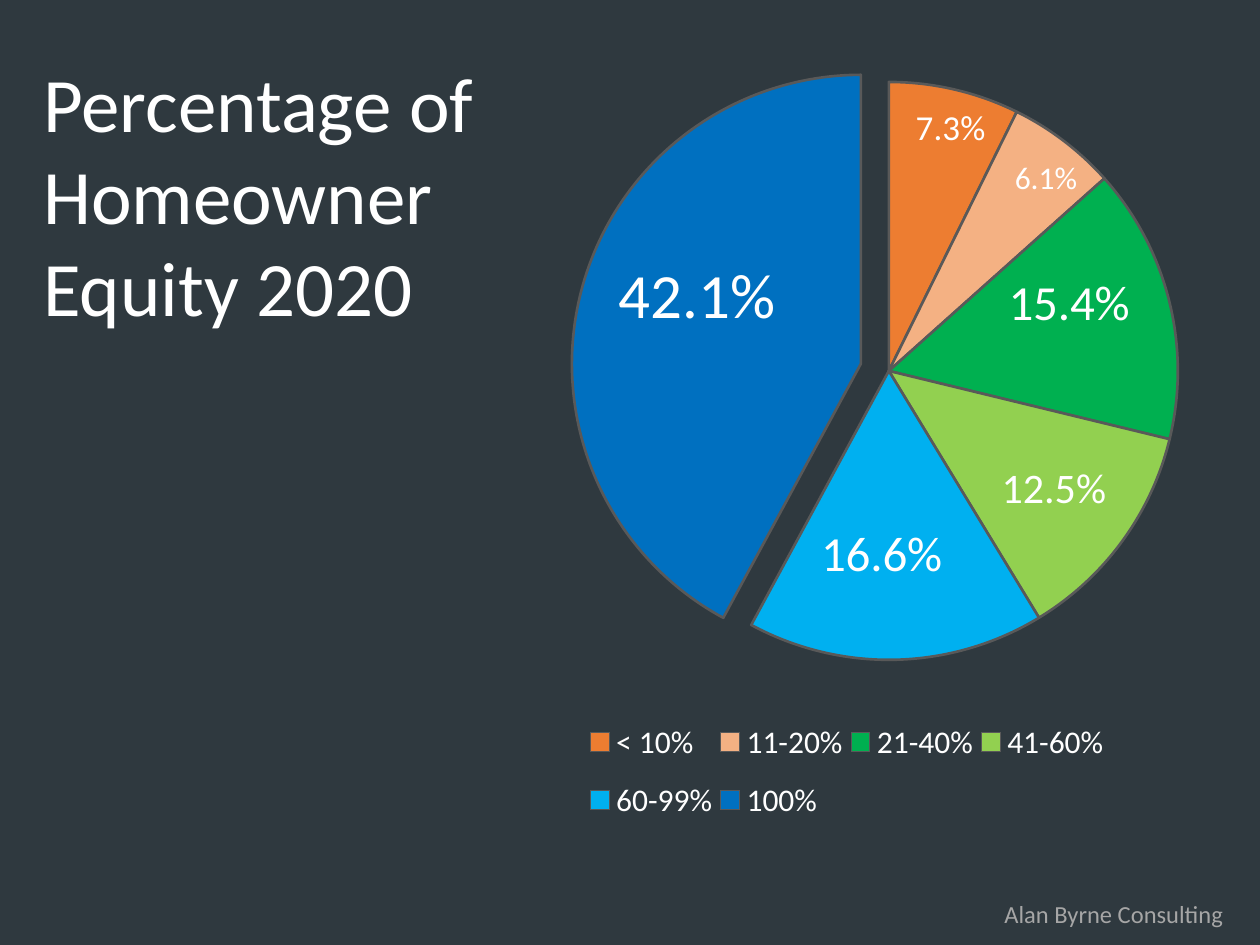
from lxml.etree import Element, SubElement
from pptx import Presentation
from pptx.chart.data import CategoryChartData
from pptx.dml.color import RGBColor
from pptx.enum.chart import XL_CHART_TYPE, XL_LABEL_POSITION, XL_LEGEND_POSITION
from pptx.oxml.ns import qn
from pptx.util import Emu, Pt

PIXEL = 914400 // 126
FONT = "Calibri"
CHART_BOX = (396, -18, 936, 857)
PLOT_BOX = (600, 82, 578, 578)
LEGEND_BOX = (582, 703, 530, 136)
INSIDE = XL_LABEL_POSITION.INSIDE_END
CENTER = XL_LABEL_POSITION.CENTER
BEST_FIT = XL_LABEL_POSITION.BEST_FIT
EQUITY_BANDS = [
    ("< 10%", 0.073, "ED7D31", 20, BEST_FIT, None),
    ("11-20%", 0.061, "F4B183", 18, INSIDE, (18, 13)),
    ("21-40%", 0.154, "00B050", 28, CENTER, (40, -32)),
    ("41-60%", 0.125, "92D050", 24, INSIDE, (-10, -22)),
    ("60-99%", 0.166, "00B0F0", 28, CENTER, (-11, 40)),
    ("100%", 0.421, "0070C0", 36, CENTER, (-24, -31)),
]


def px(length):
    return Emu(length * PIXEL)


def color(value):
    return RGBColor.from_string(value)


def style_font(font, size, fill):
    font.name = FONT
    font.size = Pt(size)
    font.color.rgb = color(fill)


def add_text(slide, box, lines, size, fill):
    shape = slide.shapes.add_textbox(*map(px, box))
    text_frame = shape.text_frame
    text_frame.word_wrap = False
    text_frame.text = "\n".join(lines)
    for paragraph in text_frame.paragraphs:
        for run in paragraph.runs:
            style_font(run.font, size, fill)


def insert_layout(parent, index, settings):
    for old in parent.findall(qn("c:layout")):
        parent.remove(old)
    layout = Element(qn("c:layout"))
    manual = SubElement(layout, qn("c:manualLayout"))
    for name, value in settings:
        SubElement(manual, qn(f"c:{name}")).set("val", str(value))
    parent.insert(index, layout)


def place_part(parent, index, box, target=None):
    left, top, width, height = CHART_BOX
    settings = [("layoutTarget", target)] if target else []
    settings += [
        ("xMode", "edge"),
        ("yMode", "edge"),
        ("x", round((box[0] - left) / width, 4)),
        ("y", round((box[1] - top) / height, 4)),
        ("w", round(box[2] / width, 4)),
        ("h", round(box[3] / height, 4)),
    ]
    insert_layout(parent, index, settings)


def find_indexed(series, tag, index):
    for element in series._element.iter(qn(tag)):
        if element.find(qn("c:idx")).get("val") == str(index):
            return element


def shift_label(series, index, offset):
    settings = [
        ("x", round(offset[0] / CHART_BOX[2], 4)),
        ("y", round(offset[1] / CHART_BOX[3], 4)),
    ]
    insert_layout(find_indexed(series, "c:dLbl", index), 1, settings)


def explode_point(series, index, percent):
    explosion = Element(qn("c:explosion"))
    explosion.set("val", str(percent))
    point = find_indexed(series, "c:dPt", index)
    point.find(qn("c:spPr")).addprevious(explosion)


def style_slices(plot):
    plot.vary_by_categories = True
    series = plot.series[0]
    labels = series.data_labels
    labels.show_value = True
    labels.number_format = "0.0%"
    labels.number_format_is_linked = False
    labels.position = BEST_FIT
    style_font(labels.font, 20, "FFFFFF")
    for index, (_, _, fill, size, position, offset) in enumerate(EQUITY_BANDS):
        point = series.points[index]
        point.format.fill.solid()
        point.format.fill.fore_color.rgb = color(fill)
        point.format.line.color.rgb = color("595959")
        point.format.line.width = Pt(1.5)
        if offset:
            style_font(point.data_label.font, size, "FFFFFF")
            point.data_label.position = position
            shift_label(series, index, offset)
    explode_point(series, len(EQUITY_BANDS) - 1, 10)


def add_equity_pie(slide):
    data = CategoryChartData(number_format="0.0%")
    data.categories = [band[0] for band in EQUITY_BANDS]
    data.add_series("Series 1", [band[1] for band in EQUITY_BANDS])
    frame = slide.shapes.add_chart(XL_CHART_TYPE.PIE, *map(px, CHART_BOX), data)
    chart = frame.chart
    chart.has_title = False
    style_font(chart.font, 10, "000000")
    style_slices(chart.plots[0])
    chart.has_legend = True
    legend = chart.legend
    legend.position = XL_LEGEND_POSITION.BOTTOM
    legend.include_in_layout = False
    style_font(legend.font, 18, "FFFFFF")
    chart_space = chart._chartSpace
    place_part(chart_space.find(".//" + qn("c:plotArea")), 0, PLOT_BOX, "inner")
    place_part(chart_space.find(".//" + qn("c:legend")), 1, LEGEND_BOX)


def main():
    presentation = Presentation()
    presentation.slide_width = px(1260)
    presentation.slide_height = px(945)
    slide = presentation.slides.add_slide(presentation.slide_layouts[6])
    slide.background.fill.solid()
    slide.background.fill.fore_color.rgb = color("2F393F")
    add_equity_pie(slide)
    title = ["Percentage of", "Homeowner", "Equity 2020"]
    add_text(slide, (31, 49, 478, 292), title, 44, "FFFFFF")
    add_text(slide, (992, 893, 248, 43), ["Alan Byrne Consulting"], 14, "A6A6A6")
    presentation.save("out.pptx")


if __name__ == "__main__":
    main()
